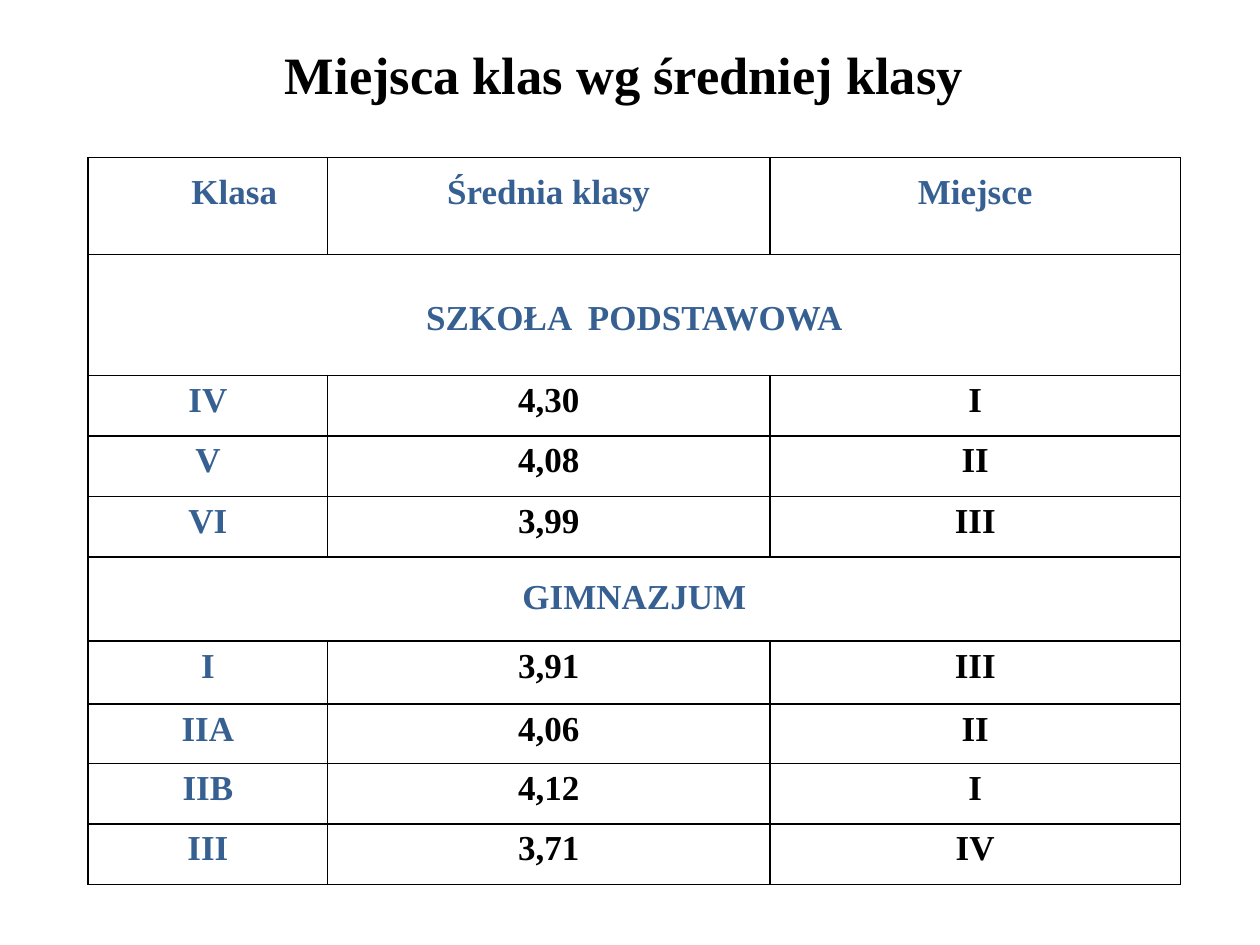
import pptx
import pptx.util
import pptx.dml.color
import pptx.enum.text
import pptx.oxml
import pptx.oxml.ns

Inches = pptx.util.Inches
Pt = pptx.util.Pt
BLACK = pptx.dml.color.RGBColor(0x00, 0x00, 0x00)
BLUE = pptx.dml.color.RGBColor(0x37, 0x60, 0x92)
FACE = "Times New Roman"
COLS = [1.9, 3.51, 3.26]
ROWS = [0.77, 0.96, 0.48, 0.48, 0.48, 0.67, 0.5, 0.47, 0.48, 0.48]
DROPS = {0: 0.08, 1: 0.31, 5: 0.12}
GRADES = [
    ["Klasa", "Średnia klasy", "Miejsce"],
    ["SZKOŁA  PODSTAWOWA"],
    ["IV", "4,30", "I"],
    ["V", "4,08", "II"],
    ["VI", "3,99", "III"],
    ["GIMNAZJUM"],
    ["I", "3,91", "III"],
    ["IIA", "4,06", "II"],
    ["IIB", "4,12", "I"],
    ["III", "3,71", "IV"],
]


class Deck:
    """Holds the text style and the current slide."""

    def __init__(self, show):
        self.face = FACE
        self.slide = show.slides.add_slide(show.slide_layouts[5])

    def label(self, frame, text, size, color):
        frame.text = text
        line = frame.paragraphs[0]
        line.alignment = pptx.enum.text.PP_ALIGN.CENTER
        line.font.name = self.face
        line.font.size = Pt(size)
        line.font.bold = True
        line.font.color.rgb = color
        return line

    def title(self, text, left, top, width, height):
        shape = self.slide.shapes.title
        shape.left, shape.top = Inches(left), Inches(top)
        shape.width, shape.height = Inches(width), Inches(height)
        frame = shape.text_frame
        self.label(frame, text, 30, BLACK)
        frame.word_wrap = False
        frame.vertical_anchor = pptx.enum.text.MSO_ANCHOR.TOP
        frame.margin_top = Inches(0.08)
        frame.margin_left, frame.margin_right = Inches(0.1), Inches(0.2)

    def border(self, cell):
        props = cell._tc.get_or_add_tcPr()
        for side in ("lnL", "lnR", "lnT", "lnB"):
            props.append(pptx.oxml.parse_xml(
                f'<a:{side} {pptx.oxml.ns.nsdecls("a")} w="12700"><a:solidFill>'
                f'<a:srgbClr val="{BLACK}"/></a:solidFill></a:{side}>'))
        cell.fill.background()

    def cell(self, cell, text, color, drop):
        cell.margin_left = cell.margin_right = Inches(0.05)
        cell.margin_top, cell.margin_bottom = Inches(drop), 0
        line = self.label(cell.text_frame, text, 20, color)
        line.line_spacing = 1.15

    def table(self, data, left, top):
        grid = self.slide.shapes.add_table(
            len(ROWS), len(COLS), Inches(left), Inches(top),
            Inches(sum(COLS)), Inches(sum(ROWS))).table
        grid.first_row = grid.horz_banding = False
        for col, width in zip(grid.columns, COLS):
            col.width = Inches(width)
        for row, height in zip(grid.rows, ROWS):
            row.height = Inches(height)
        for cell in grid.iter_cells():
            self.border(cell)
        for r, words in enumerate(data):
            if len(words) == 1:
                grid.cell(r, 0).merge(grid.cell(r, len(COLS) - 1))
            for c, text in enumerate(words):
                color = BLUE if r == 0 or c == 0 else BLACK
                self.cell(grid.cell(r, c), text, color, DROPS.get(r, 0))
        grid.cell(0, 0).margin_left = Inches(0.47)


def main():
    show = pptx.Presentation()
    show.slide_width, show.slide_height = Inches(10), Inches(7.5)
    deck = Deck(show)
    deck.title("Miejsca klas wg średniej klasy", 2.13, 0.25, 5.75, 0.86)
    deck.table(GRADES, 0.7, 1.25)
    show.save("out.pptx")


if __name__ == "__main__":
    main()
